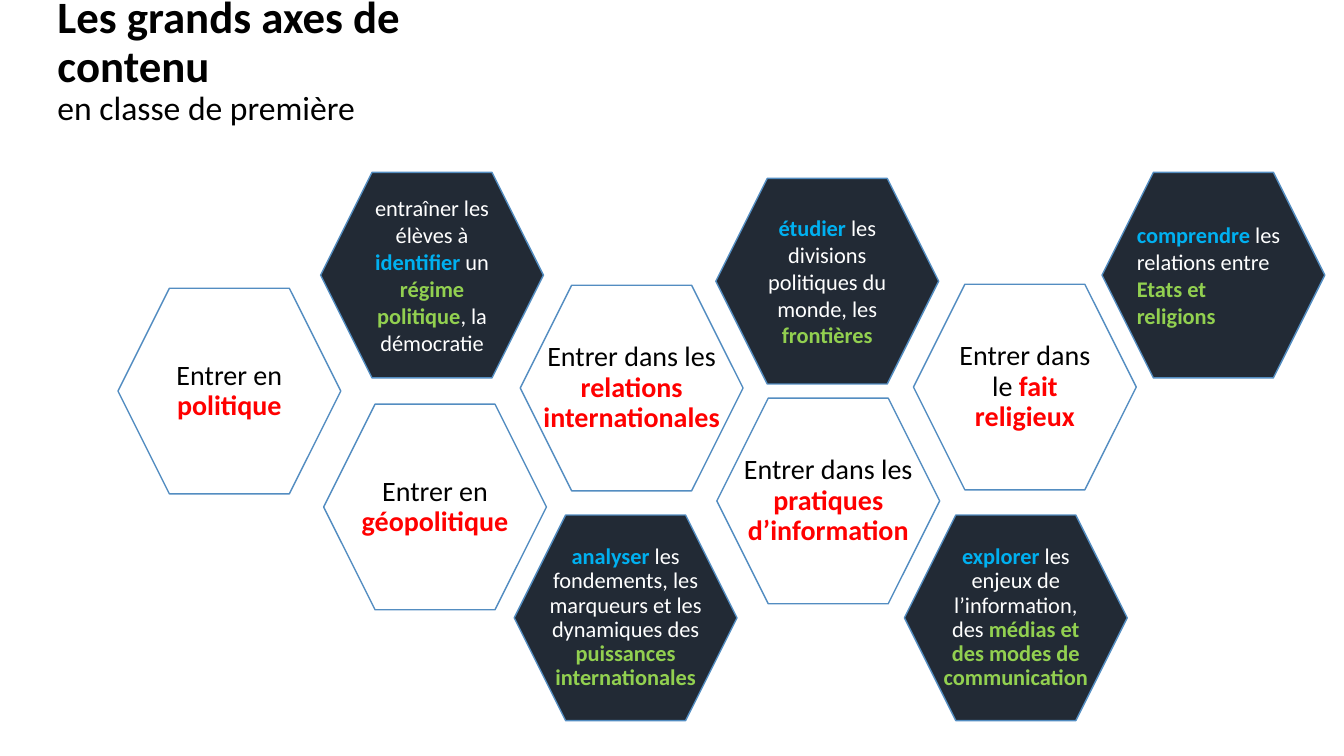
from lxml import etree
from pptx import Presentation
from pptx.dml.color import RGBColor
from pptx.enum.shapes import MSO_SHAPE as SHAPE
from pptx.enum.text import MSO_ANCHOR as ANCHOR, MSO_AUTO_SIZE as AUTO, PP_ALIGN as ALIGN
from pptx.oxml.ns import qn
from pptx.util import Inches, Pt

HEX_W, HEX_H = 2.21, 2.04
TEXT_W, TEXT_H = 1.52, 1.41
WHITE, DARK, OUTLINE = "FFFFFF", "222A35", "538DC1"

# Run styles: colour, bold
PLAIN = ("000000", False)
THEME = ("FF0000", True)
LIGHT = (WHITE, False)
VERB = ("00B0F0", True)
KEY = ("92D050", True)

# Left, top, text width, runs
THEMES = [
    (5.16, 2.83, 1.77, [("Entrer dans les ", PLAIN), ("relations internationales", THEME)]),
    (1.17, 2.86, TEXT_W, [("Entrer en ", PLAIN), ("politique", THEME)]),
    (3.21, 4.01, TEXT_W, [("Entrer en ", PLAIN), ("géopolitique", THEME)]),
    (7.11, 3.95, 1.78, [("Entrer dans les ", PLAIN), ("pratiques d’information", THEME)]),
    (9.06, 2.82, TEXT_W, [("Entrer dans le ", PLAIN), ("fait religieux", THEME)]),
]

# Left, top, line spacing, alignment, runs
GOALS = [
    (7.10, 1.77, 1.0, ALIGN.CENTER, [
        ("étudier ", VERB), ("les divisions politiques du monde, les ", LIGHT),
        ("frontières", KEY)]),
    (3.18, 1.71, 1.0, ALIGN.CENTER, [
        ("entraîner les élèves à ", LIGHT), ("identifier", VERB), (" un ", LIGHT),
        ("régime politique", KEY), (", la démocratie", LIGHT)]),
    (5.10, 5.11, 0.9, ALIGN.CENTER, [
        ("analyser ", VERB), ("les fondements, les marqueurs et les dynamiques des ", LIGHT),
        ("puissances internationales", KEY)]),
    (8.97, 5.11, 0.9, ALIGN.CENTER, [
        ("explorer ", VERB), ("les enjeux de l’information, des ", LIGHT),
        ("médias et des modes de communication", KEY)]),
    (10.93, 1.71, 1.0, ALIGN.LEFT, [
        ("comprendre ", VERB), ("les relations entre ", LIGHT),
        ("Etats et religions", KEY)]),
]


def rgb(value):
    return RGBColor.from_string(value)


def set_attrs(target, values):
    for name, value in values.items():
        setattr(target, name, value)


def add_run(p, text, size, style):
    color, bold = style
    r = p.add_run()
    r.text = text
    set_attrs(r.font, {"name": "Calibri", "size": Pt(size), "bold": bold})
    r.font.color.rgb = rgb(color)


def add_title(slide):
    s = slide.shapes.title
    set_attrs(s, {"left": Inches(0.47), "top": Inches(0),
                  "width": Inches(5.09), "height": Inches(1.22)})
    tf = s.text_frame
    set_attrs(tf, {"word_wrap": True, "auto_size": AUTO.NONE,
                   "vertical_anchor": ANCHOR.MIDDLE})
    p = tf.paragraphs[0]
    set_attrs(p, {"alignment": ALIGN.LEFT, "line_spacing": 0.9})
    add_run(p, "Les grands axes de contenu", 32, ("000000", True))
    p.add_line_break()
    # Keeps the break from taking the larger size of the layout
    etree.SubElement(p._p[-1], qn("a:rPr"), sz="3200")
    add_run(p, "en classe de première", 24, PLAIN)


def add_hexagon(slide, left, top, fill, runs, size, text_w=TEXT_W,
                spacing=0.9, align=ALIGN.CENTER):
    """Group a hexagon with a text box centred on it."""
    shapes = slide.shapes.add_group_shape().shapes
    s = shapes.add_shape(SHAPE.HEXAGON, Inches(left), Inches(top),
                         Inches(HEX_W), Inches(HEX_H))
    s.adjustments[0] = 0.25
    s.shadow.inherit = False
    s.fill.solid()
    s.fill.fore_color.rgb = rgb(fill)
    s.line.color.rgb = rgb(OUTLINE)
    s.line.width = Pt(1)

    box = shapes.add_textbox(Inches(left + (HEX_W - text_w) / 2),
                             Inches(top + (HEX_H - TEXT_H) / 2),
                             Inches(text_w), Inches(TEXT_H))
    tf = box.text_frame
    set_attrs(tf, {"word_wrap": True, "vertical_anchor": ANCHOR.MIDDLE,
                   "margin_left": 0, "margin_right": 0,
                   "margin_top": Inches(0.01), "margin_bottom": Inches(0.01)})
    p = tf.paragraphs[0]
    set_attrs(p, {"alignment": align, "line_spacing": spacing})
    for text, style in runs:
        add_run(p, text, size, style)


def main():
    prs = Presentation()
    prs.slide_width, prs.slide_height = Inches(13.33), Inches(7.5)
    slide = prs.slides.add_slide(prs.slide_layouts[5])
    add_title(slide)
    for left, top, text_w, runs in THEMES:
        add_hexagon(slide, left, top, WHITE, runs, 20, text_w=text_w)
    for left, top, spacing, align, runs in GOALS:
        add_hexagon(slide, left, top, DARK, runs, 16, spacing=spacing, align=align)
    prs.save("out.pptx")


if __name__ == "__main__":
    main()
